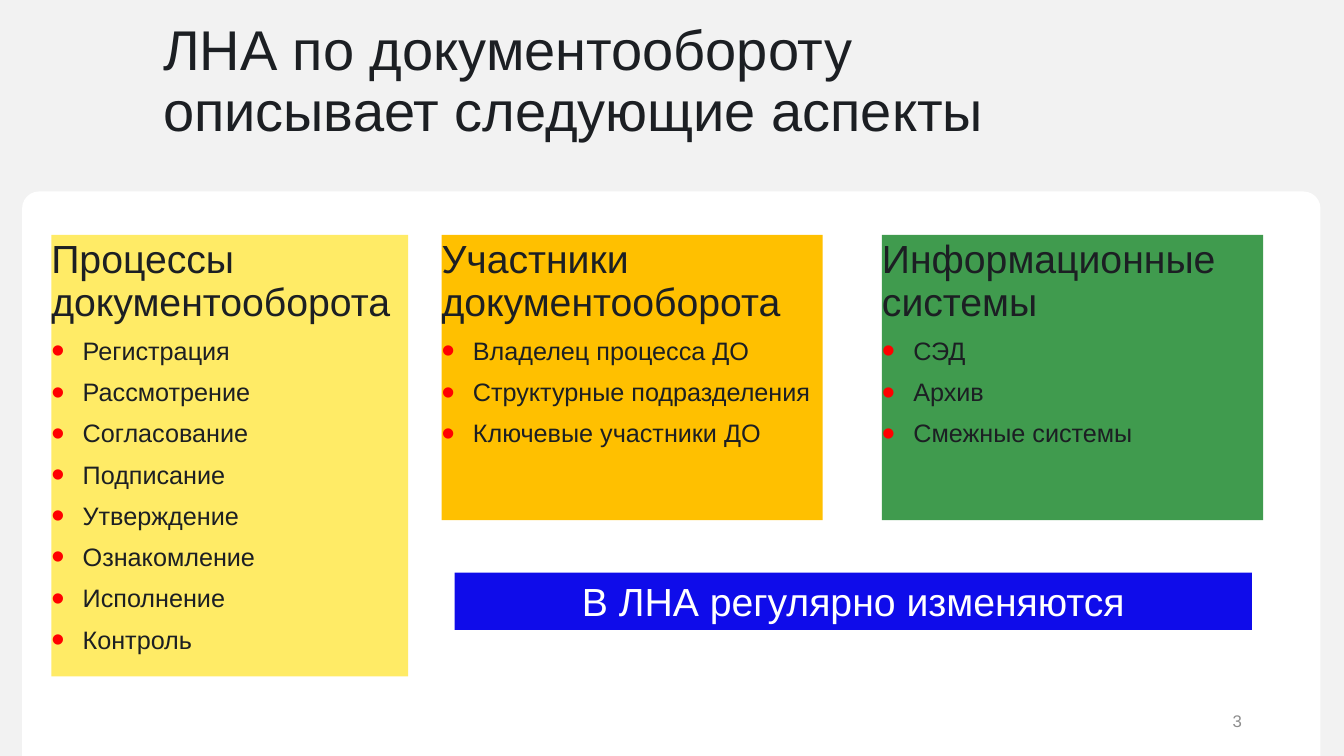
"""Build the slide on the aspects covered by document-flow regulations."""
from lxml.etree import SubElement
from pptx import Presentation
from pptx.dml.color import RGBColor
from pptx.enum.shapes import MSO_SHAPE as Shape
from pptx.enum.text import MSO_ANCHOR as Anchor, MSO_AUTO_SIZE as AutoSize, PP_ALIGN as Align
from pptx.oxml.ns import qn
from pptx.util import Pt

FONT = "Arial"
BACKGROUND = RGBColor(0xF2, 0xF2, 0xF2)
WHITE = RGBColor(0xFF, 0xFF, 0xFF)
INK = RGBColor(0x1C, 0x1F, 0x23)
GREY = RGBColor(0x8D, 0x8D, 0x8D)
YELLOW = RGBColor(0xFF, 0xEB, 0x66)
AMBER = RGBColor(0xFF, 0xC0, 0x00)
GREEN = RGBColor(0x40, 0x9B, 0x4E)
BLUE = RGBColor(0x0F, 0x0C, 0xEA)
RED = RGBColor(0xFF, 0x00, 0x00)

CARD_TOP = 167.8
BULLET_INDENT = 22.4
CARDS = [
    (36.7, 254.9, 315.4, YELLOW, "Процессы документооборота",
     ["Регистрация", "Рассмотрение", "Согласование", "Подписание",
      "Утверждение", "Ознакомление", "Исполнение", "Контроль"]),
    (315.4, 272.2, 203.8, AMBER, "Участники документооборота",
     ["Владелец процесса ДО", "Структурные подразделения", "Ключевые участники ДО"]),
    (630, 272.2, 203.8, GREEN, "Информационные системы",
     ["СЭД", "Архив", "Смежные системы"]),
]


def add_panel(slide, box, color, kind=Shape.RECTANGLE):
    """Add a filled shape without outline or shadow."""
    panel = slide.shapes.add_shape(kind, *map(Pt, box))
    panel.shadow.inherit = False
    panel.fill.solid()
    panel.fill.fore_color.rgb = color
    panel.line.fill.background()
    return panel


def set_frame(frame, anchor=Anchor.TOP, left=7.2):
    """Set wrapping, anchor and margins of a text frame."""
    frame.word_wrap = True
    frame.vertical_anchor = anchor
    frame.margin_left, frame.margin_right = Pt(left), Pt(7.2)
    frame.margin_top = frame.margin_bottom = Pt(3.6)
    return frame


def add_bullet(paragraph):
    """Give a paragraph a large red hanging bullet."""
    properties = paragraph._p.get_or_add_pPr()
    properties.set("marL", str(Pt(BULLET_INDENT)))
    properties.set("indent", str(-Pt(BULLET_INDENT)))
    bullet_color = SubElement(properties, qn("a:buClr"))
    SubElement(bullet_color, qn("a:srgbClr"), val=str(RED))
    SubElement(properties, qn("a:buSzPct"), val="150000")
    SubElement(properties, qn("a:buFont"), typeface=FONT)
    SubElement(properties, qn("a:buChar"), char="•")


def write(paragraph, text, size=18, color=INK, align=Align.LEFT, spacing=0.9, before=0, bullet=False):
    """Write formatted text into a paragraph."""
    if bullet:
        add_bullet(paragraph)
    paragraph.alignment = align
    paragraph.line_spacing = spacing
    paragraph.space_before = Pt(before)
    run = paragraph.add_run()
    run.text = text
    run.font.name = FONT
    run.font.size = Pt(size)
    run.font.color.rgb = color


def add_label(slide, box, text, **style):
    """Add a text box with one vertically centred paragraph."""
    label = slide.shapes.add_textbox(*map(Pt, box))
    frame = set_frame(label.text_frame, Anchor.MIDDLE)
    write(frame.paragraphs[0], text, **style)


def add_card(slide, left, width, height, color, heading, items):
    """Add a coloured card with a heading and a bulleted list."""
    card = add_panel(slide, (left, CARD_TOP, width, height), color)
    frame = set_frame(card.text_frame, left=0)
    write(frame.paragraphs[0], heading, size=28)
    for item in items:
        write(frame.add_paragraph(), item, before=10, bullet=True)


def add_banner(slide, box, text):
    """Add the blue banner with centred white text."""
    banner = add_panel(slide, box, BLUE)
    frame = set_frame(banner.text_frame)
    frame.auto_size = AutoSize.SHAPE_TO_FIT_TEXT
    write(frame.paragraphs[0], text, size=28, color=WHITE, align=Align.CENTER, spacing=1)


def main():
    """Build and save the presentation."""
    deck = Presentation()
    deck.slide_width, deck.slide_height = Pt(960), Pt(540)
    slide = deck.slides.add_slide(deck.slide_layouts[6])
    slide.background.fill.solid()
    slide.background.fill.fore_color.rgb = BACKGROUND

    sheet = add_panel(slide, (15.8, 136.8, 927.4, 403.2), WHITE, Shape.ROUND_2_SAME_RECTANGLE)
    sheet.adjustments[0] = 0.03
    sheet.adjustments[1] = 0
    add_label(slide, (109.4, 25.2, 649.4, 67.7),
              "ЛНА по документообороту описывает следующие аспекты", size=40)
    for card in CARDS:
        add_card(slide, *card)
    add_banner(slide, (324.7, 409, 569.5, 41), "В ЛНА регулярно изменяются")
    add_label(slide, (678.2, 500.4, 216, 28.8), "3",
              size=12, color=GREY, align=Align.RIGHT, spacing=1)
    deck.save("out.pptx")


if __name__ == "__main__":
    main()
